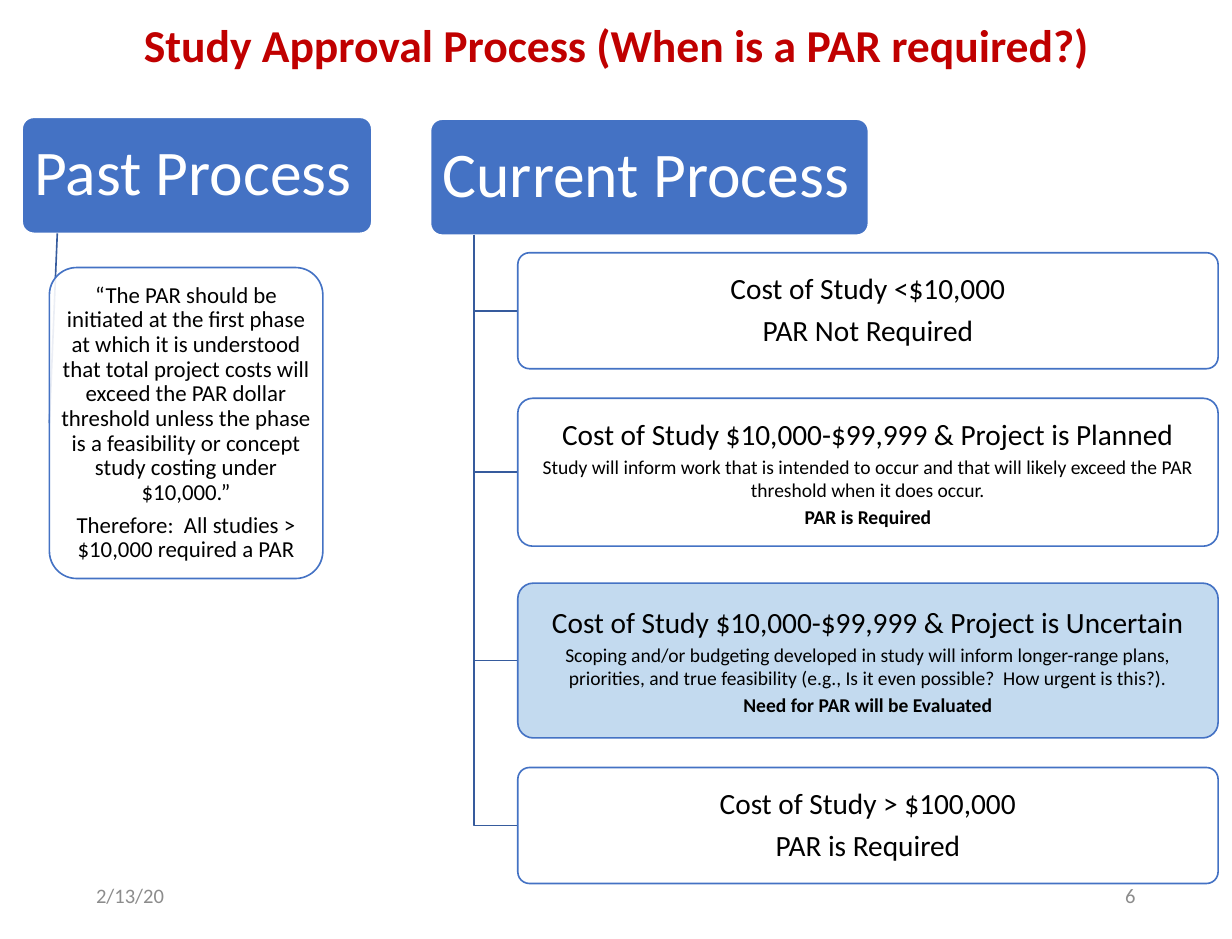
from lxml.etree import SubElement
from pptx import Presentation
from pptx.dml.color import RGBColor
from pptx.enum.shapes import MSO_CONNECTOR, MSO_SHAPE
from pptx.enum.text import MSO_ANCHOR, PP_ALIGN
from pptx.oxml.ns import qn
from pptx.util import Cm, Pt

BLUE = RGBColor(0x44, 0x72, 0xC4)
LINK_BLUE = RGBColor(0x36, 0x5B, 0x9D)
PALE_BLUE = RGBColor(0xBD, 0xD7, 0xEE)
WHITE = RGBColor(0xFF, 0xFF, 0xFF)
BLACK = RGBColor(0, 0, 0)
RED = RGBColor(0xC0, 0, 0)
GREY = RGBColor(0x8C, 0x8C, 0x8C)

LEFT, CENTER, RIGHT = PP_ALIGN.LEFT, PP_ALIGN.CENTER, PP_ALIGN.RIGHT


def write(shape, lines, color, align, spacing=0.9, after=0, inset=0.25):
    """Fill a shape with paragraphs given as (text, point size, bold)."""
    frame = shape.text_frame
    frame.word_wrap = True
    frame.vertical_anchor = MSO_ANCHOR.MIDDLE
    frame.margin_left = frame.margin_right = Cm(inset)
    frame.margin_top = frame.margin_bottom = Cm(0.08)
    for i, (text, size, bold) in enumerate(lines):
        paragraph = frame.paragraphs[0] if i == 0 else frame.add_paragraph()
        paragraph.alignment = align
        paragraph.line_spacing = spacing
        paragraph.space_after = Pt(after)
        run = paragraph.add_run()
        run.text = text
        for name, value in {"name": "Calibri", "size": Pt(size), "bold": bold}.items():
            setattr(run.font, name, value)
        run.font.color.rgb = color


def add_box(left, top, width, height, fill, line, opacity=100):
    box = slide.shapes.add_shape(
        MSO_SHAPE.ROUNDED_RECTANGLE, Cm(left), Cm(top), Cm(width), Cm(height))
    box.adjustments[0] = 0.1
    box.shadow.inherit = False
    box.fill.solid()
    box.fill.fore_color.rgb = fill
    box.line.color.rgb = line
    box.line.width = Pt(1)
    if opacity < 100:
        fill_color = box.fill._xPr.find(qn("a:solidFill"))[0]
        SubElement(fill_color, qn("a:alpha"), val=str(opacity * 1000))
    return box


presentation = Presentation()
presentation.slide_width, presentation.slide_height = Cm(26.67), Cm(20.32)
slide = presentation.slides.add_slide(presentation.slide_layouts[6])

# Title, date and slide number
for text, left, top, width, height, size, bold, color, align in [
    ("Study Approval Process (When is a PAR required?)",
     1.83, 0.54, 23.01, 0.97, 28, True, RED, CENTER),
    ("2/13/20", 1.83, 18.86, 6, 1.09, 12.6, False, GREY, LEFT),
    ("6", 18.83, 18.86, 6, 1.09, 12.6, False, GREY, RIGHT),
]:
    label = slide.shapes.add_textbox(Cm(left), Cm(top), Cm(width), Cm(height))
    write(label, [(text, size, bold)], color, align)

# Column headers
for text, left, top, width in [
    ("Past Process", 0.48, 2.54, 7.57),
    ("Current Process", 9.32, 2.58, 9.48),
]:
    header = add_box(left, top, width, 2.51, BLUE, WHITE)
    write(header, [(text, 39, False)], WHITE, LEFT, inset=0.19)

# Past rule, its link lying under the card
past_link = slide.shapes.add_connector(
    MSO_CONNECTOR.STRAIGHT, Cm(1.24), Cm(5.05), Cm(1.07), Cm(9.14))
past_link.line.color.rgb = LINK_BLUE
past_link.line.width = Pt(1)
SubElement(past_link._element.spPr, qn("a:effectLst"))

past_card = add_box(1.07, 5.79, 5.92, 6.73, WHITE, BLUE, opacity=90)
write(past_card, [
    ("“The PAR should be initiated at the first phase at which it is understood "
     "that total project costs will exceed the PAR dollar threshold unless the "
     "phase is a feasibility or concept study costing under $10,000.”", 14, False),
    ("Therefore:  All studies > $10,000 required a PAR", 14, False),
], BLACK, CENTER, after=4.9, inset=0.08)
past_link.end_connect(past_card, 1)

# Current rules, each on an elbow from the header
TRUNK_X, TRUNK_TOP = 10.26, 5.08
CARD_LEFT, CARD_WIDTH = 11.21, 15.16
for top, height, fill, spacing, after, lines in [
    (5.47, 2.51, WHITE, 0.9, 6.3, [
        ("Cost of Study <$10,000", 18, False),
        ("PAR Not Required", 18, False)]),
    (8.62, 3.2, WHITE, 1.0, 2, [
        ("Cost of Study $10,000-$99,999 & Project is Planned", 18, False),
        ("Study will inform work that is intended to occur and that will likely "
         "exceed the PAR threshold when it does occur.", 12, False),
        ("PAR is Required", 12, True)]),
    (12.62, 3.35, PALE_BLUE, 1.0, 2, [
        ("Cost of Study $10,000-$99,999 & Project is Uncertain", 18, False),
        ("Scoping and/or budgeting developed in study will inform longer-range "
         "plans, priorities, and true feasibility (e.g., Is it even possible?  "
         "How urgent is this?).", 12, False),
        ("Need for PAR will be Evaluated", 12, True)]),
    (16.61, 2.51, WHITE, 0.9, 6.3, [
        ("Cost of Study > $100,000", 18, False),
        ("PAR is Required", 18, False)]),
]:
    middle = Cm(top + height / 2)
    outline = slide.shapes.build_freeform(Cm(TRUNK_X), Cm(TRUNK_TOP))
    outline.add_line_segments(
        [(Cm(TRUNK_X), middle), (Cm(CARD_LEFT), middle)], close=False)
    elbow = outline.convert_to_shape()
    elbow.shadow.inherit = False
    elbow.fill.background()
    elbow.line.color.rgb = LINK_BLUE
    elbow.line.width = Pt(1)

    card = add_box(CARD_LEFT, top, CARD_WIDTH, height, fill, BLUE, opacity=90)
    write(card, lines, BLACK, CENTER, spacing, after, inset=0.1)

presentation.save("out.pptx")
